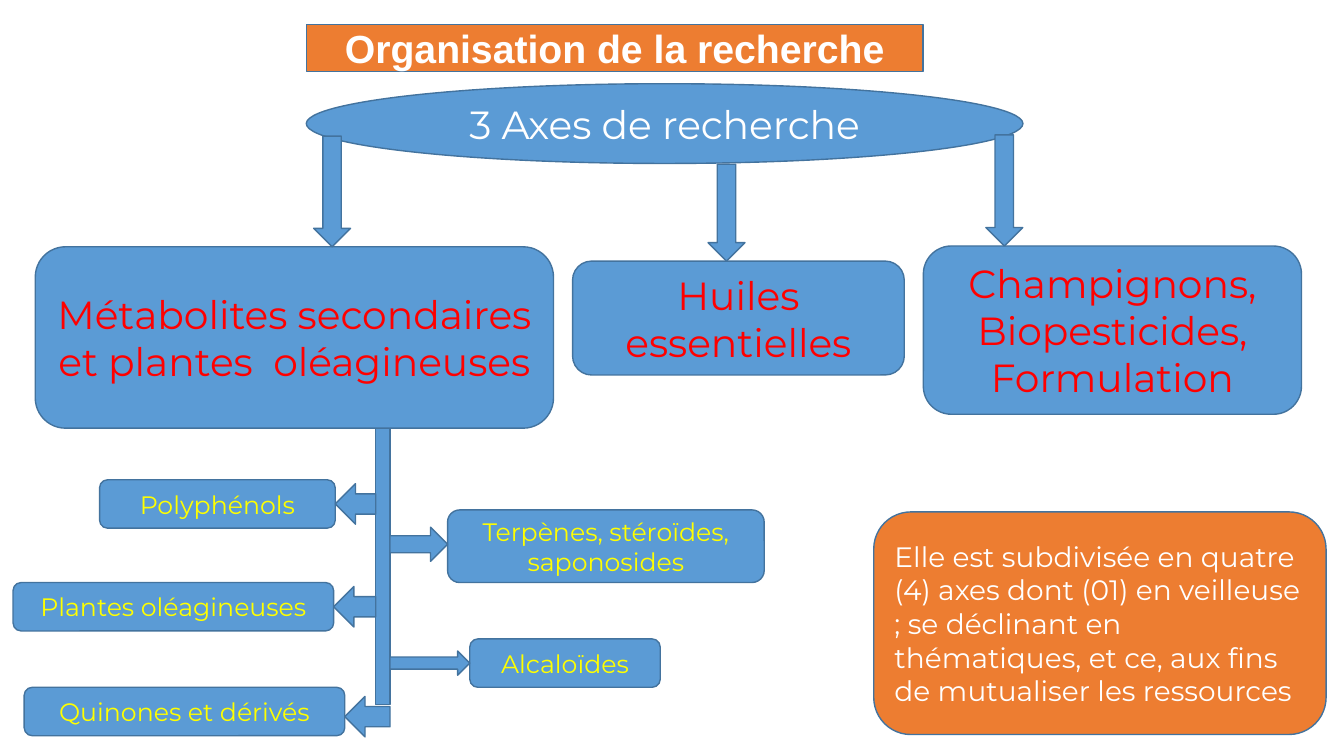
from pptx import Presentation
from pptx.dml.color import RGBColor
from pptx.enum.shapes import MSO_SHAPE
from pptx.enum.text import MSO_ANCHOR, MSO_AUTO_SIZE, PP_ALIGN
from pptx.oxml import parse_xml
from pptx.oxml.ns import nsdecls
from pptx.util import Cm, Pt

BLUE, ORANGE, OUTLINE = "5B9BD5", "ED7D31", "43739E"
WHITE, RED, YELLOW = "FFFFFF", "FF0000", "FFFF00"


def color(hex_string):
    return RGBColor.from_string(hex_string)


def paint(shape, fill):
    shape.fill.solid()
    shape.fill.fore_color.rgb = color(fill)
    shape.line.color.rgb = color(OUTLINE)
    shape.line.width = Pt(1)


def write(shape, text, size, text_color, align=PP_ALIGN.CENTER, font_name="Montserrat", bold=False):
    frame = shape.text_frame
    frame.text = text
    frame.word_wrap = True
    frame.auto_size = MSO_AUTO_SIZE.NONE
    frame.vertical_anchor = MSO_ANCHOR.MIDDLE
    paragraph = frame.paragraphs[0]
    paragraph.alignment = align
    paragraph.line_spacing = 1.0
    paragraph.space_before = Pt(0)
    font = paragraph.runs[0].font
    font.name, font.size, font.bold = font_name, Pt(size), bold
    font.color.rgb = color(text_color)


def add_block(shapes, kind, left, top, width, height, fill=BLUE):
    """Add a filled, outlined preset shape; lengths are in centimetres."""
    shape = shapes.add_shape(kind, Cm(left), Cm(top), Cm(width), Cm(height))
    shape.shadow.inherit = False
    paint(shape, fill)
    return shape


def add_title(slide, left, top, width, height):
    title = slide.shapes.title
    title.left, title.top, title.width, title.height = Cm(left), Cm(top), Cm(width), Cm(height)
    title._element.spPr.append(parse_xml(
        f'<a:prstGeom {nsdecls("a")} prst="roundRect"><a:avLst/></a:prstGeom>'))
    paint(title, ORANGE)
    write(title, "Organisation de la recherche", 28, WHITE, font_name="Arial", bold=True)


def add_axes(slide, left, top):
    """Draw the ellipse, and the three axes that its arrows point down to."""
    # text, left, top, width, height, arrow centre, arrow top
    axes = [
        ("Huiles essentielles", 13.54, 4.47, 8.36, 2.87, 17.42, 2.03),
        ("Métabolites secondaires et plantes  oléagineuses", 0, 4.11, 13.06, 4.57, 7.48, 1.32),
        ("Champignons, Biopesticides, Formulation", 22.38, 4.09, 9.53, 4.24, 24.42, 1.29),
    ]
    arrow_width = 0.93
    for text, x, y, width, height, _, _ in axes:
        axis = add_block(slide.shapes, MSO_SHAPE.ROUNDED_RECTANGLE, left + x, top + y, width, height)
        write(axis, text, 28, RED)
    shapes = slide.shapes.add_group_shape().shapes
    ellipse = add_block(shapes, MSO_SHAPE.OVAL, left + 6.83, top, 18.06, 2.01)
    write(ellipse, "3 Axes de recherche", 28, WHITE)
    for _, _, y, _, _, center, start in axes:
        add_block(shapes, MSO_SHAPE.DOWN_ARROW, left + center - arrow_width / 2, top + start,
                  arrow_width, y - start)


def add_topics(slide, left, top):
    """Draw the trunk with topics branching off to both sides."""
    trunk_left, trunk_width = 9.14, 0.36
    trunk_right = trunk_left + trunk_width
    # text, left, top, width, height, arrow start, arrow height, arrow shift down
    topics = [
        ("Terpènes, stéroïdes, saponosides", 10.95, 2.05, 7.98, 1.83, trunk_right, 0.86, -0.05),
        ("Alcaloïdes", 11.51, 5.3, 4.8, 1.22, trunk_right, 0.61, 0),
        ("Polyphénols", 2.18, 1.29, 5.94, 1.22, trunk_left, 1.02, 0),
        ("Plantes oléagineuses", 0, 3.88, 8.08, 1.22, trunk_left, 1.02, 0),
        ("Quinones et dérivés", 0.28, 6.52, 8.08, 1.22, trunk_right, 1.02, 0.13),
    ]
    shapes = slide.shapes.add_group_shape().shapes
    add_block(shapes, MSO_SHAPE.RECTANGLE, left + trunk_left, top, trunk_width, 6.96)
    for text, x, y, width, height, start, arrow_height, shift in topics:
        topic = add_block(shapes, MSO_SHAPE.ROUNDED_RECTANGLE, left + x, top + y, width, height)
        write(topic, text, 18, YELLOW)
        if x > trunk_left:
            kind, arrow_left, arrow_right = MSO_SHAPE.RIGHT_ARROW, start, x
        else:
            kind, arrow_left, arrow_right = MSO_SHAPE.LEFT_ARROW, x + width, start
        arrow_top = y + (height - arrow_height) / 2 + shift
        add_block(shapes, kind, left + arrow_left, top + arrow_top,
                  arrow_right - arrow_left, arrow_height)


def add_remark(slide, left, top, width, height):
    remark = add_block(slide.shapes, MSO_SHAPE.ROUNDED_RECTANGLE, left, top, width, height, ORANGE)
    write(remark, "Elle est subdivisée en quatre (4) axes dont (01) en veilleuse ; se déclinant en "
          "thématiques, et ce, aux fins de mutualiser les ressources", 20, WHITE, PP_ALIGN.LEFT)


def main():
    presentation = Presentation()
    presentation.slide_width, presentation.slide_height = Cm(33.87), Cm(19.05)
    slide = presentation.slides.add_slide(presentation.slide_layouts[5])
    add_title(slide, 7.72, 0.61, 15.54, 1.19)
    add_axes(slide, 0.89, 2.11)
    add_topics(slide, 0.33, 10.8)
    add_remark(slide, 22.02, 12.9, 11.4, 5.61)
    presentation.save("out.pptx")


if __name__ == "__main__":
    main()
